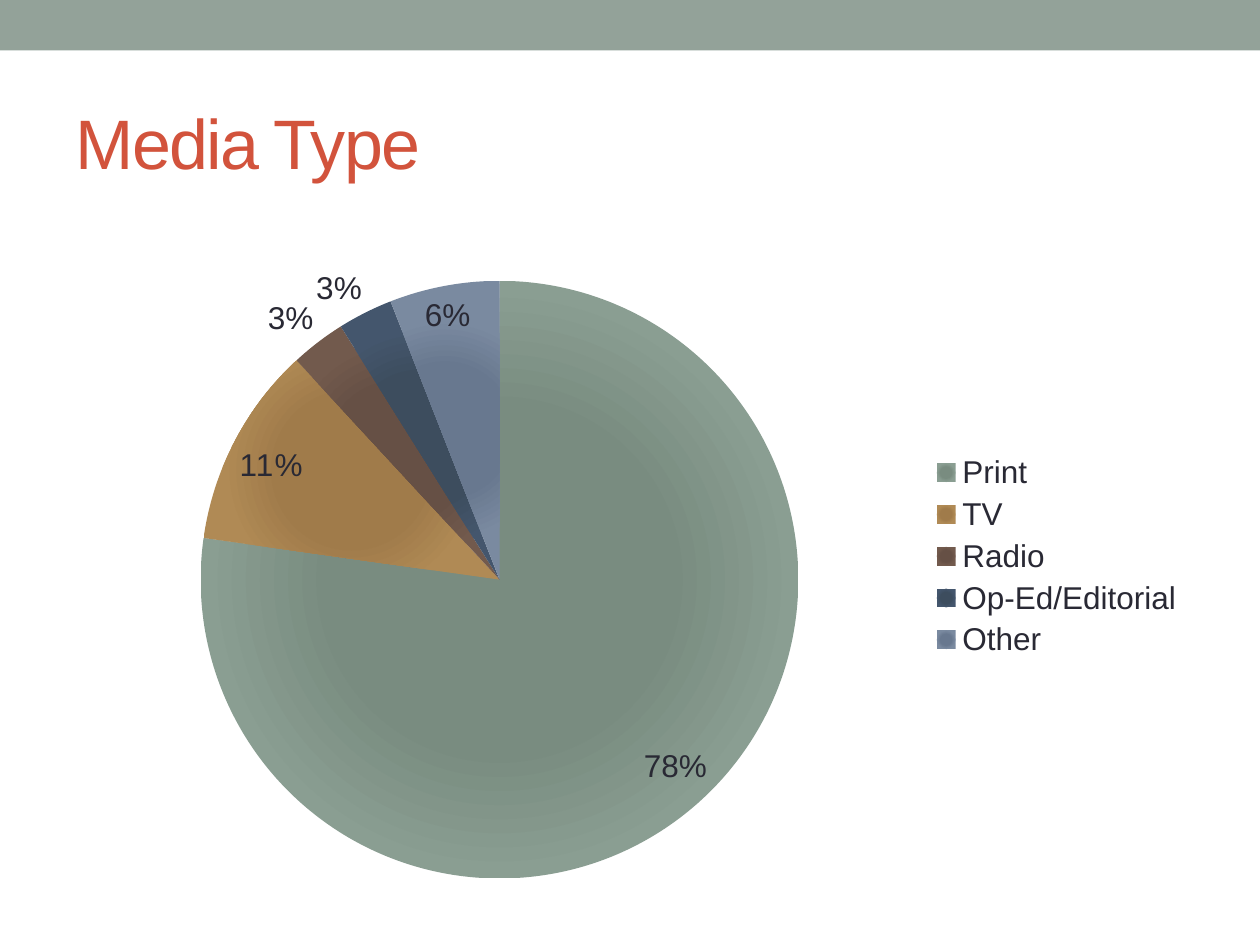
from dataclasses import dataclass

from lxml.etree import SubElement
from pptx import Presentation
from pptx.chart.data import CategoryChartData
from pptx.dml.color import RGBColor
from pptx.enum.chart import XL_CHART_TYPE, XL_LABEL_POSITION, XL_LEGEND_POSITION
from pptx.enum.shapes import MSO_SHAPE
from pptx.enum.text import MSO_ANCHOR, PP_ALIGN
from pptx.oxml import parse_xml
from pptx.oxml.ns import nsdecls, qn
from pptx.util import Inches, Pt


@dataclass(frozen=True)
class Theme:
    font: str = "Arial"
    band: str = "93A299"
    heading: str = "D2533C"
    text: str = "292934"
    title_size: int = 40
    chart_size: int = 18


theme = Theme()
media = [
    ("Print", 78, "798C80", "8A9E92"),
    ("TV", 11, "A07B4A", "B08A55"),
    ("Radio", 3, "665045", "725A4D"),
    ("Op-Ed/Editorial", 3, "3D4D5E", "44566D"),
    ("Other", 6, "68788F", "7A8AA0"),
]


def style_font(font, size, color):
    font.name = theme.font
    font.size = Pt(size)
    font.bold = False
    font.color.rgb = RGBColor.from_string(color)


def radial_fill(center, edge):
    stops = [(0, center), (40, center), (70, edge), (100, edge)]
    stop_xml = "".join(
        f'<a:gs pos="{position * 1000}"><a:srgbClr val="{color}"/></a:gs>'
        for position, color in stops
    )
    return parse_xml(
        f'<a:gradFill {nsdecls("a")} rotWithShape="1"><a:gsLst>{stop_xml}</a:gsLst>'
        '<a:path path="circle"><a:fillToRect l="50000" t="50000" r="50000" b="50000"/>'
        "</a:path></a:gradFill>"
    )


prs = Presentation()
prs.slide_width, prs.slide_height = Inches(10), Inches(7.5)
slide = prs.slides.add_slide(prs.slide_layouts.get_by_name("Title Only"))

band = slide.shapes.add_shape(MSO_SHAPE.RECTANGLE, 0, 0, Inches(10), Inches(0.4))
band.shadow.inherit = False
band.fill.solid()
band.fill.fore_color.rgb = RGBColor.from_string(theme.band)
band.line.fill.background()

title = slide.shapes.title
title.left, title.top = Inches(0.5), Inches(0.58)
title.width, title.height = Inches(9), Inches(1.08)
title.text_frame.text = "Media Type"
title.text_frame.vertical_anchor = MSO_ANCHOR.MIDDLE
heading = title.text_frame.paragraphs[0]
heading.alignment = PP_ALIGN.LEFT
style_font(heading.font, theme.title_size, theme.heading)
heading.runs[0].font._element.set("spc", "-100")

media_data = CategoryChartData(number_format='0"%"')
media_data.categories = [name for name, *_ in media]
media_data.add_series("Series 1", [share for _, share, *_ in media])
pie = slide.shapes.add_chart(
    XL_CHART_TYPE.PIE, Inches(0.5), Inches(1.75), Inches(9), Inches(5.33), media_data
).chart
pie.has_title = False
style_font(pie.font, theme.chart_size, theme.text)
pie.has_legend = True
pie.legend.position = XL_LEGEND_POSITION.RIGHT
pie.legend.include_in_layout = False

plot = pie.plots[0]
plot.vary_by_categories = True
plot.has_data_labels = True
labels = plot.data_labels
labels.show_value = True
labels.number_format = '0"%"'
labels.number_format_is_linked = False
labels.position = XL_LABEL_POSITION.BEST_FIT
style_font(labels.font, theme.chart_size, theme.text)

for index, (_, _, center, edge) in enumerate(media):
    slice_format = plot.series[0].points[index].format
    slice_format.line.fill.background()
    slice_format.fill.background()
    properties = plot.series[0].points[index]._element.findall(".//" + qn("c:dPt"))[index].find(qn("c:spPr"))
    properties.replace(properties.find(qn("a:noFill")), radial_fill(center, edge))

plot_area = pie._chartSpace.find(".//" + qn("c:plotArea"))
layout = plot_area.find(qn("c:layout"))
if layout is None:
    layout = parse_xml(f'<c:layout {nsdecls("c")}/>')
    plot_area.insert(0, layout)
manual = SubElement(layout, qn("c:manualLayout"))
for tag, value in [
    ("layoutTarget", "inner"), ("xMode", "edge"), ("yMode", "edge"),
    ("x", "0.12"), ("y", "0.09"), ("w", "0.53"), ("h", "0.89"),
]:
    SubElement(manual, qn(f"c:{tag}")).set("val", value)

prs.save("out.pptx")
